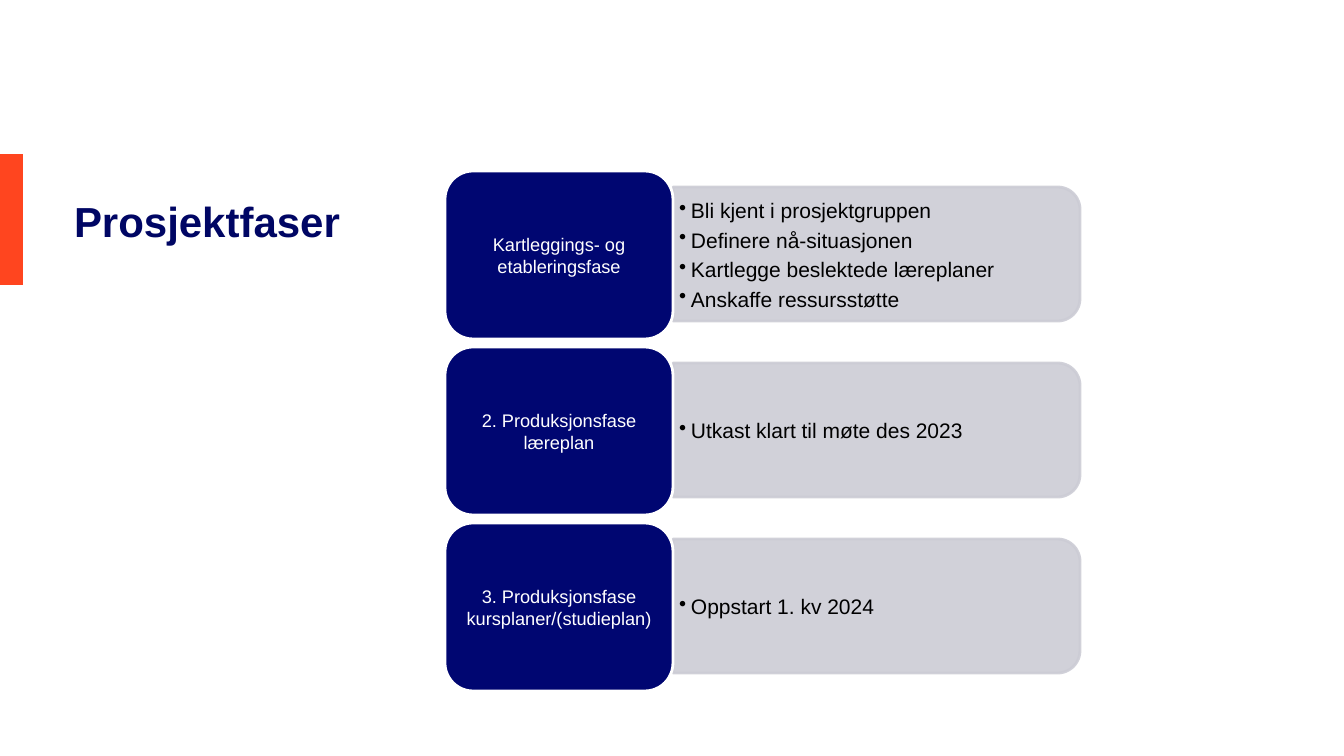
import dataclasses

import pptx
import pptx.dml.color
import pptx.enum.shapes
import pptx.enum.text
import pptx.oxml
import pptx.oxml.ns
import pptx.util

SHAPE = pptx.enum.shapes.MSO_SHAPE
ALIGN = pptx.enum.text.PP_ALIGN
MIDDLE = pptx.enum.text.MSO_ANCHOR.MIDDLE

PHASES = [
    ("Kartleggings- og etableringsfase", [
        "Bli kjent i prosjektgruppen",
        "Definere nå-situasjonen",
        "Kartlegge beslektede læreplaner",
        "Anskaffe ressursstøtte",
    ]),
    ("2. Produksjonsfase læreplan", ["Utkast klart til møte des 2023"]),
    ("3. Produksjonsfase kursplaner/(studieplan)", ["Oppstart 1. kv 2024"]),
]


@dataclasses.dataclass(frozen=True)
class Theme:
    font: str = "Arial"
    accent: str = "FF451F"
    title: str = "000664"
    label: str = "000671"
    panel: str = "CCCCD5"
    text: str = "000000"
    white: str = "FFFFFF"
    title_size: int = 30
    list_size: int = 15
    label_size: int = 13


def px(count):
    return pptx.util.Emu(round(count * 914400 / 100.8))


def rgb(code):
    return pptx.dml.color.RGBColor.from_string(code)


def fade(shape, percent):
    """Make the fill and the line of a shape partly transparent."""
    for color in shape._element.spPr.iter(pptx.oxml.ns.qn("a:srgbClr")):
        alpha = pptx.oxml.parse_xml(
            f'<a:alpha {pptx.oxml.ns.nsdecls("a")} val="{percent * 1000}"/>')
        color.append(alpha)


def bullet(para, indent):
    props = para._p.get_or_add_pPr()
    props.set("marL", str(px(indent)))
    props.set("indent", str(-px(indent)))
    props.append(pptx.oxml.parse_xml(
        f'<a:buChar {pptx.oxml.ns.nsdecls("a")} char="•"/>'))


class Deck:
    def __init__(self, theme):
        self.theme = theme
        self.prs = pptx.Presentation()
        self.prs.slide_width = px(1344)
        self.prs.slide_height = px(756)
        self.slide = self.prs.slides.add_slide(self.prs.slide_layouts[5])

    def style(self, para, size, color, bold=False):
        para.font.name = self.theme.font
        para.font.size = pptx.util.Pt(size)
        para.font.color.rgb = rgb(color)
        para.font.bold = bold

    def frame(self, shape, side, edge):
        """Prepare a wrapped, middle-anchored text frame."""
        frame = shape.text_frame
        frame.word_wrap = True
        frame.vertical_anchor = MIDDLE
        frame.margin_left = frame.margin_right = px(side)
        frame.margin_top = frame.margin_bottom = px(edge)
        return frame

    def title(self, text, x, y, w, h):
        shape = self.slide.shapes.title
        shape.left, shape.top, shape.width, shape.height = map(px, (x, y, w, h))
        frame = self.frame(shape, 10, 5)
        frame.text = text
        para = frame.paragraphs[0]
        para.alignment = ALIGN.LEFT
        self.style(para, self.theme.title_size, self.theme.title, True)

    def block(self, kind, x, y, w, h, fill, line=None):
        shape = self.slide.shapes.add_shape(kind, *map(px, (x, y, w, h)))
        shape.shadow.inherit = False
        shape.fill.solid()
        shape.fill.fore_color.rgb = rgb(fill)
        if line:
            shape.line.color.rgb = rgb(line)
            shape.line.width = pptx.util.Pt(2)
        else:
            shape.line.fill.background()
        return shape

    def panel(self, x, y, w, h):
        """Draw a panel rounded on its right side, by a quarter turn."""
        shift = (w - h) / 2
        shape = self.block(SHAPE.ROUND_2_SAME_RECTANGLE, x + shift, y - shift,
                           h, w, self.theme.panel, self.theme.panel)
        shape.rotation = 90
        fade(shape, 90)

    def label(self, text, x, y, w, h):
        shape = self.block(SHAPE.ROUNDED_RECTANGLE, x, y, w, h,
                           self.theme.label, self.theme.white)
        frame = self.frame(shape, 5, 3)
        frame.text = text
        para = frame.paragraphs[0]
        para.alignment = ALIGN.CENTER
        self.style(para, self.theme.label_size, self.theme.white)

    def list(self, items, x, y, w, h):
        box = self.slide.shapes.add_textbox(*map(px, (x, y, w, h)))
        frame = self.frame(box, 6, 3)
        frame.text = "\n".join(items)
        for para in frame.paragraphs:
            para.level = 1
            para.space_after = pptx.util.Pt(3)
            bullet(para, 12)
            self.style(para, self.theme.list_size, self.theme.text)


def main():
    theme = Theme()
    deck = Deck(theme)
    deck.block(SHAPE.RECTANGLE, 0, 154, 23, 131, theme.accent)
    deck.title("Prosjektfaser", 64, 144, 357, 153)
    for row, (name, items) in enumerate(PHASES):
        top = 171 + 176 * row
        deck.panel(673, top + 16, 407, 134)
        deck.list(items, 673, top + 23, 400, 121)
        deck.label(name, 445, top, 228, 168)
    deck.prs.save("out.pptx")


if __name__ == "__main__":
    main()
